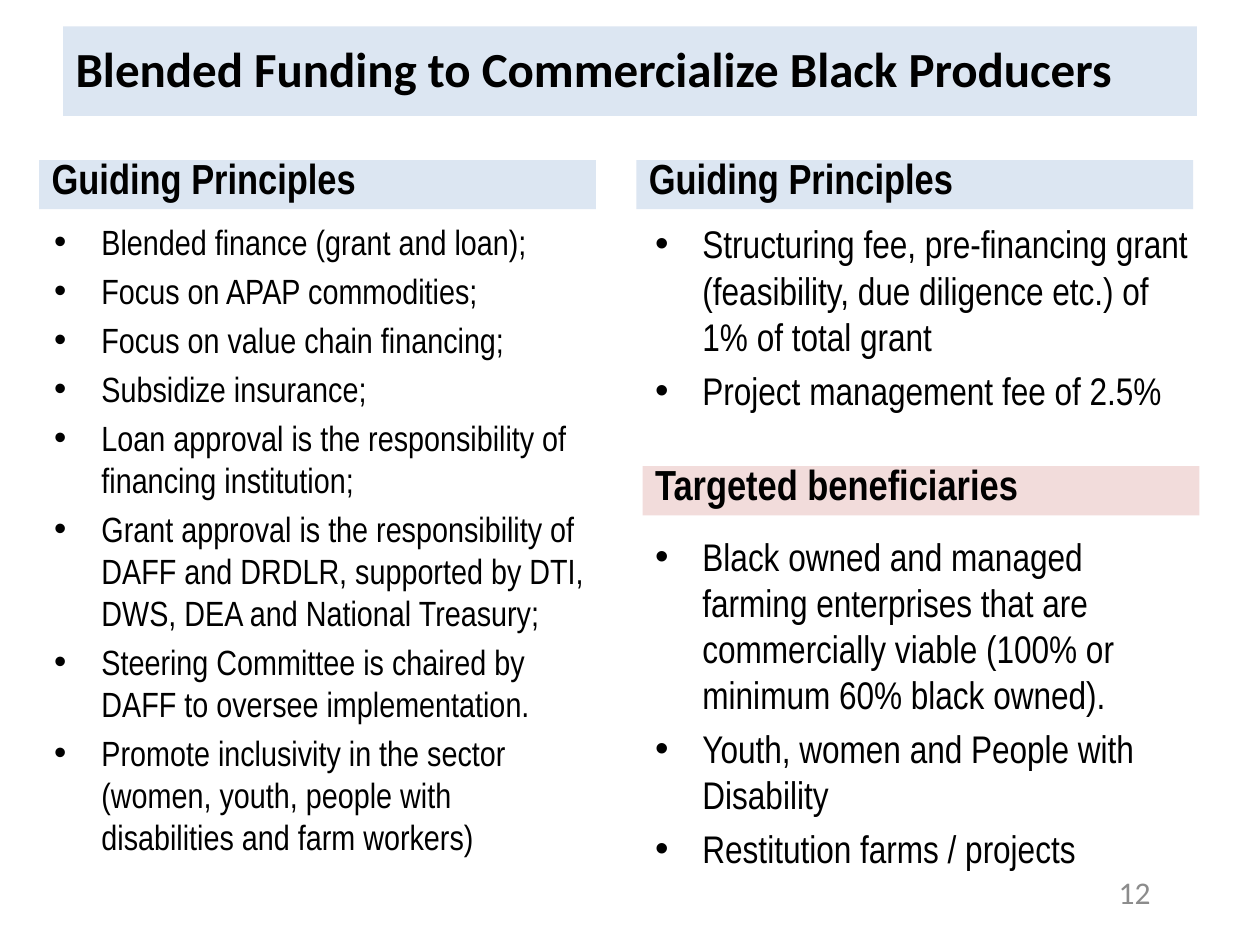
from pptx import Presentation
from pptx.dml.color import RGBColor
from pptx.enum.shapes import MSO_SHAPE
from pptx.enum.text import MSO_ANCHOR as Anchor, MSO_AUTO_SIZE as AutoSize, PP_ALIGN as Align
from pptx.util import Inches, Pt

TITLE = "Blended Funding to Commercialize Black Producers"
PRINCIPLES = [
    "Blended finance (grant and loan);",
    "Focus on APAP commodities;",
    "Focus on value chain financing;",
    "Subsidize insurance;",
    "Loan approval is the responsibility of financing institution;",
    "Grant approval is the responsibility of DAFF and DRDLR, supported by DTI, "
    "DWS, DEA and National Treasury;",
    "Steering Committee is chaired by DAFF to oversee implementation.",
    "Promote inclusivity in the sector (women, youth, people with disabilities "
    "and farm workers)",
]
FEES = [
    "Structuring fee, pre-financing grant (feasibility, due diligence etc.) of "
    "1% of total grant",
    "Project management fee of 2.5%",
]
BENEFICIARIES = [
    "Black owned and managed farming enterprises that are commercially viable "
    "(100% or minimum 60% black owned).",
    "Youth, women and People with Disability",
    "Restitution farms / projects",
]
BLUE, PINK, BLACK, GREY = "DCE6F2", "F2DCDB", "000000", "8C8C8C"
BAND_SIZE = (4.42, 0.39)
BENEFICIARIES_GAP = Pt(68.4)  # room for the pink band between the two lists

LIST_TEXT = {"name": "Arial Narrow", "bold": False}
BAND_TEXT = {"name": "Arial Narrow", "bold": True, "size": Pt(24)}
TITLE_TEXT = {"name": "Calibri", "bold": True, "size": Pt(28)}
NUMBER_TEXT = {"name": "Calibri", "size": Pt(18)}


def rgb(value):
    return RGBColor.from_string(value)


def place(shape, left, top, width, height):
    shape.left, shape.top = Inches(left), Inches(top)
    shape.width, shape.height = Inches(width), Inches(height)


def write(shape, lines, font, anchor, align=Align.LEFT, color=BLACK):
    """Fill the shape with one paragraph per line and return the paragraphs."""
    frame = shape.text_frame
    frame.text = "\n".join(lines)
    frame.word_wrap = True
    frame.auto_size = AutoSize.NONE
    frame.vertical_anchor = anchor
    for para in frame.paragraphs:
        para.alignment = align
        for span in para.runs:
            for name, value in font.items():
                setattr(span.font, name, value)
            span.font.color.rgb = rgb(color)
    return frame.paragraphs


def paint(shape, color):
    shape.fill.solid()
    shape.fill.fore_color.rgb = rgb(color)


def band(shape, text, left, top, color):
    place(shape, left, top, *BAND_SIZE)
    paint(shape, color)
    write(shape, [text], BAND_TEXT, Anchor.BOTTOM)


deck = Presentation()
deck.slide_width, deck.slide_height = Inches(10), Inches(7.5)
slide = deck.slides.add_slide(deck.slide_layouts.get_by_name("Comparison"))
title, left_head, left_list, right_head, right_list = slide.placeholders

place(title, 0.5, 0.21, 9, 0.71)
paint(title, BLUE)
write(title, [TITLE], TITLE_TEXT, Anchor.MIDDLE)[0].line_spacing = 0.9

band(left_head, "Guiding Principles", 0.31, 1.27, BLUE)
band(right_head, "Guiding Principles", 5.05, 1.27, BLUE)

place(left_list, 0.33, 1.7, 4.44, 5.8)
write(left_list, PRINCIPLES, {**LIST_TEXT, "size": Pt(20)}, Anchor.TOP)
place(right_list, 5.1, 1.7, 4.46, 5.55)
items = write(right_list, FEES + BENEFICIARIES, {**LIST_TEXT, "size": Pt(22)}, Anchor.TOP)
items[len(FEES)].space_before = BENEFICIARIES_GAP

target_head = slide.shapes.add_shape(MSO_SHAPE.RECTANGLE, 0, 0, 0, 0)
target_head.shadow.inherit = False
target_head.line.fill.background()
band(target_head, "Targeted beneficiaries", 5.1, 3.7, PINK)

page_number = slide.shapes.add_textbox(0, 0, 0, 0)
place(page_number, 6.9, 6.88, 2.33, 0.4)
write(page_number, ["12"], NUMBER_TEXT, Anchor.MIDDLE, Align.RIGHT, GREY)

deck.save("out.pptx")
